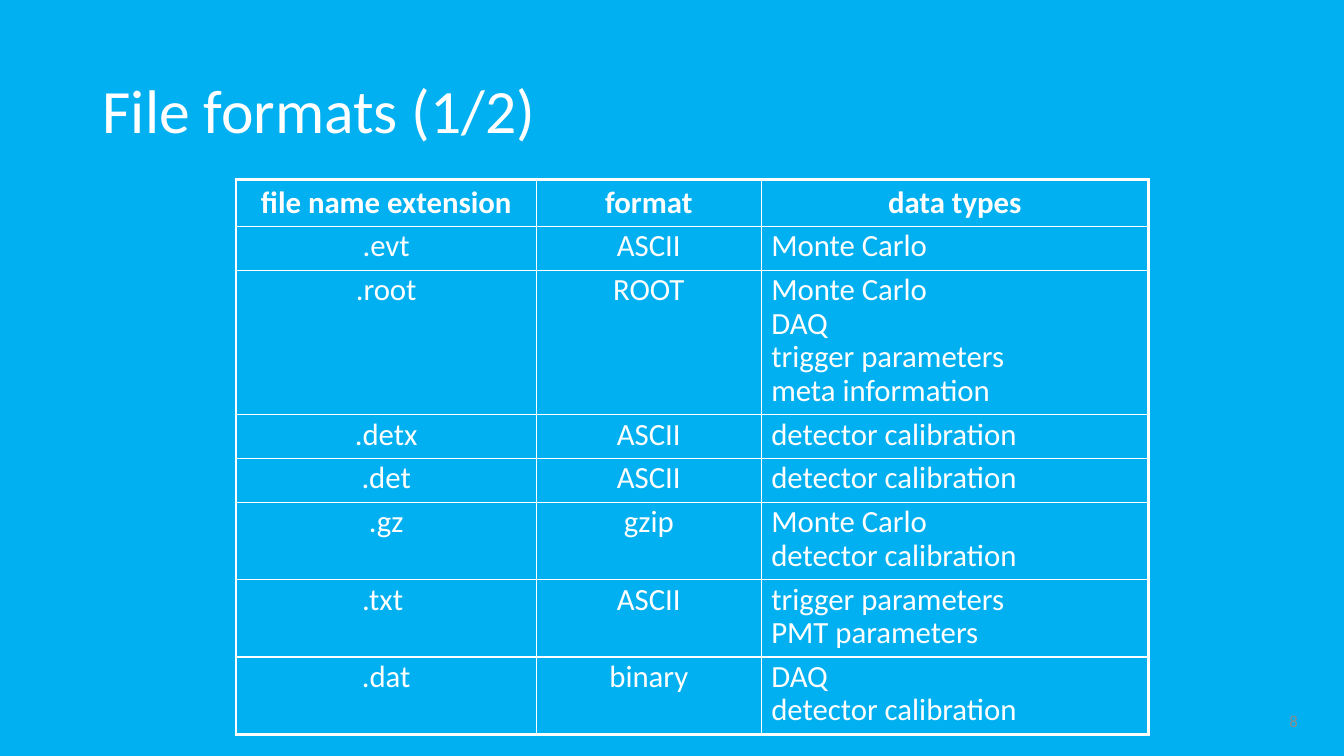
from dataclasses import dataclass

from lxml import etree
from pptx import Presentation
from pptx.dml.color import RGBColor
from pptx.enum.text import MSO_ANCHOR, PP_ALIGN
from pptx.oxml.ns import qn
from pptx.util import Inches, Pt

LEFT, CENTER, RIGHT = PP_ALIGN.LEFT, PP_ALIGN.CENTER, PP_ALIGN.RIGHT
MIDDLE = MSO_ANCHOR.MIDDLE


@dataclass(frozen=True)
class Theme:
    font: str = "Calibri"
    back: str = "00B0F0"
    text: str = "FFFFFF"
    muted: str = "8C8C8C"
    title: int = 44
    body: int = 22
    small: int = 12
    leading: int = 24
    outer: float = 2.25
    inner: float = 1


THEME = Theme()
WIDTHS = (2.98, 2.23, 3.84)
ROW_HEIGHT = 0.41
# \n starts a paragraph, \v breaks a line within one
ROWS = (
    ("file name extension", "format", "data types"),
    (".evt", "ASCII", "Monte Carlo"),
    (".root", "ROOT", "Monte Carlo\nDAQ\ntrigger parameters\nmeta information"),
    (".detx", "ASCII", "detector calibration"),
    (".det", "ASCII", "detector calibration"),
    (".gz", "gzip", "Monte Carlo\vdetector calibration"),
    (".txt ", "ASCII", "trigger parameters\nPMT parameters"),
    (".dat", "binary", "DAQ\vdetector calibration"),
)


def set_text(frame, text, size, color, align=LEFT, bold=False, spacing=None):
    frame.text = text
    for para in frame.paragraphs:
        para.alignment = align
        para.line_spacing = spacing
        for run in para.runs:
            font = run.font
            font.name, font.size, font.bold = THEME.font, Pt(size), bold
            font.color.rgb = RGBColor.from_string(color)


def add_label(slide, box, text, size, color, align=LEFT, spacing=None):
    frame = slide.shapes.add_textbox(*map(Inches, box)).text_frame
    frame.word_wrap = True
    frame.vertical_anchor = MIDDLE
    set_text(frame, text, size, color, align, spacing=spacing)


def set_borders(cell, outer):
    """Draw all four sides, heavier on those named in outer."""
    props = cell._tc.get_or_add_tcPr()
    for index, side in enumerate("LRTB"):
        width = THEME.outer if side in outer else THEME.inner
        line = etree.Element(qn(f"a:ln{side}"), w=str(Pt(width)))
        fill = etree.SubElement(line, qn("a:solidFill"))
        etree.SubElement(fill, qn("a:srgbClr"), val=THEME.text)
        props.insert(index, line)


def add_grid(slide, left, top):
    last_row, last_col = len(ROWS) - 1, len(WIDTHS) - 1
    table = slide.shapes.add_table(
        len(ROWS), len(WIDTHS), Inches(left), Inches(top),
        Inches(sum(WIDTHS)), Inches(ROW_HEIGHT * len(ROWS))).table
    table.first_row = table.horz_banding = False
    for col, width in zip(table.columns, WIDTHS):
        col.width = Inches(width)
    for r, texts in enumerate(ROWS):
        table.rows[r].height = Inches(ROW_HEIGHT)
        head = r == 0
        for c, text in enumerate(texts):
            cell = table.cell(r, c)
            cell.fill.background()
            set_text(cell.text_frame, text, THEME.body, THEME.text,
                     CENTER if head or c < last_col else LEFT, head,
                     None if head else Pt(THEME.leading))
            edges = {"L": c == 0, "R": c == last_col,
                     "T": head, "B": r == last_row}
            set_borders(cell, [side for side in edges if edges[side]])


def main():
    deck = Presentation()
    deck.slide_width, deck.slide_height = Inches(13.33), Inches(7.5)
    slide = deck.slides.add_slide(deck.slide_layouts[6])
    fill = slide.background.fill
    fill.solid()
    fill.fore_color.rgb = RGBColor.from_string(THEME.back)
    add_label(slide, (0.92, 0.4, 11.5, 1.45), "File formats (1/2)",
              THEME.title, THEME.text, spacing=0.9)
    add_label(slide, (9.97, 6.95, 3, 0.4), "8",
              THEME.small, THEME.muted, RIGHT)
    add_grid(slide, 2.34, 1.78)
    deck.save("out.pptx")


if __name__ == "__main__":
    main()
